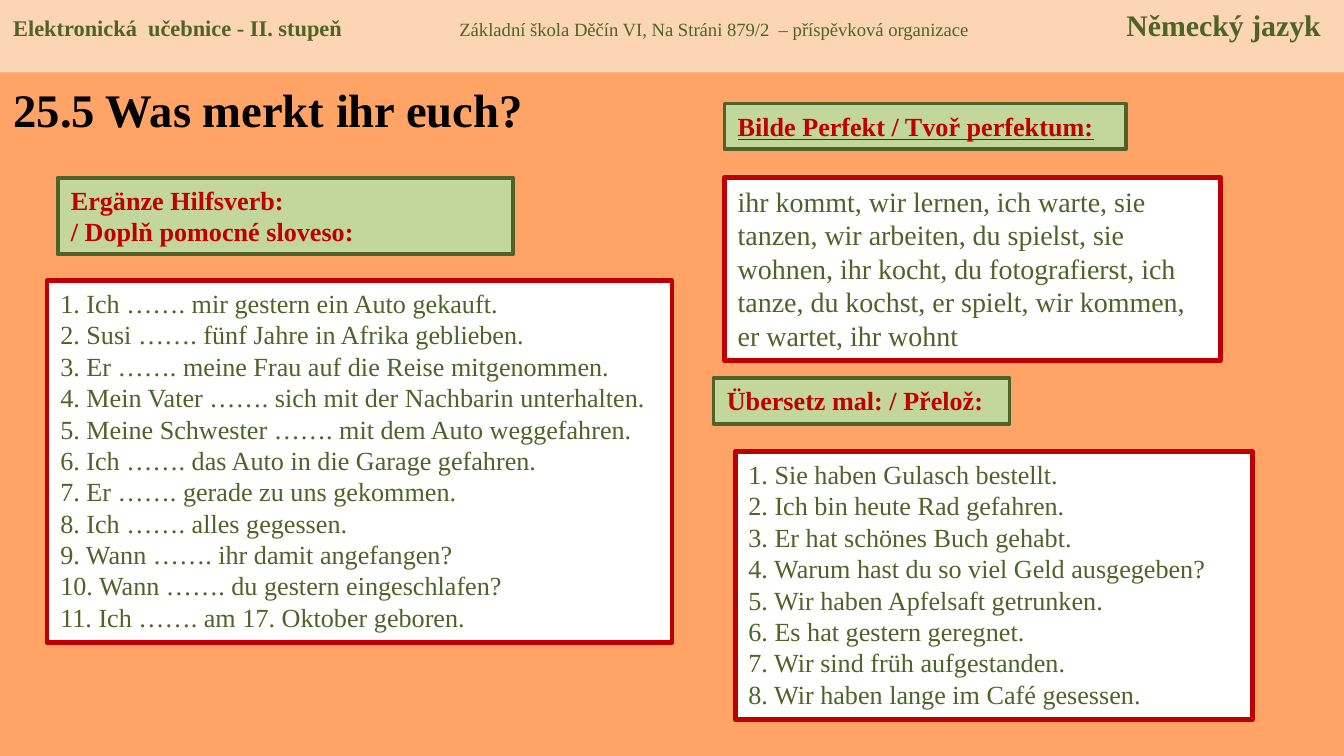
from lxml.etree import SubElement
from pptx import Presentation
from pptx.dml.color import RGBColor
from pptx.enum.shapes import MSO_SHAPE
from pptx.enum.text import MSO_ANCHOR, MSO_AUTO_SIZE, PP_ALIGN
from pptx.oxml.ns import qn
from pptx.util import Inches, Pt

COLORS = {
    "background": "FFA366",
    "band": "FCD5B5",
    "label": "C3D69B",
    "green": "4F6228",
    "red": "C00000",
    "white": "FFFFFF",
    "black": "000000",
}
FONT = "Times New Roman"
SLIDE_BOX = (0, 0, Inches(10), Inches(5.625))

HELPER_VERBS = [
    "1. Ich ……. mir gestern ein Auto gekauft.",
    "2. Susi ……. fünf Jahre in Afrika geblieben.",
    "3. Er ……. meine Frau auf die Reise mitgenommen.",
    "4. Mein Vater ……. sich mit der Nachbarin unterhalten.",
    "5. Meine Schwester ……. mit dem Auto weggefahren.",
    "6. Ich ……. das Auto in die Garage gefahren.",
    "7. Er ……. gerade zu uns gekommen.",
    "8. Ich ……. alles gegessen.",
    "9. Wann ……. ihr damit angefangen?",
    "10. Wann ……. du gestern eingeschlafen?",
    "11. Ich ……. am 17. Oktober geboren.",
]
PERFECT_FORMS = [
    "ihr kommt, wir lernen, ich warte, sie tanzen, wir arbeiten, du spielst, "
    "sie wohnen, ihr kocht, du fotografierst, ich tanze, du kochst, er spielt, "
    "wir kommen, er wartet, ihr wohnt",
]
TRANSLATIONS = [
    "1. Sie haben Gulasch bestellt.",
    "2. Ich bin heute Rad gefahren.",
    "3. Er hat schönes Buch gehabt.",
    "4. Warum hast du so viel Geld ausgegeben?",
    "5. Wir haben Apfelsaft getrunken.",
    "6. Es hat gestern geregnet.",
    "7. Wir sind früh aufgestanden.",
    "8. Wir haben lange im Café gesessen.",
]


def color(name):
    return RGBColor.from_string(COLORS[name])


def part(box, left, top, width, height):
    box_left, box_top, box_width, box_height = box
    return (
        round(box_left + box_width * left / 100),
        round(box_top + box_height * top / 100),
        round(box_width * width / 100),
        round(box_height * height / 100),
    )


def set_values(target, values):
    for name, value in values.items():
        setattr(target, name, value)


def add_text(paragraph, text, size, color_name, **values):
    run = paragraph.add_run()
    run.text = text
    set_values(run.font, {"name": FONT, "size": Pt(size), **values})
    run.font.color.rgb = color(color_name)


def add_panel(slide, box, fill, line=None, width=0):
    shape = slide.shapes.add_shape(MSO_SHAPE.RECTANGLE, *box)
    shape.shadow.inherit = False
    shape.fill.solid()
    shape.fill.fore_color.rgb = color(fill)
    if line:
        shape.line.color.rgb = color(line)
        shape.line.width = Pt(width)
    else:
        shape.line.fill.background()
    set_values(shape.text_frame, {
        "word_wrap": True,
        "vertical_anchor": MSO_ANCHOR.TOP,
        "auto_size": MSO_AUTO_SIZE.SHAPE_TO_FIT_TEXT,
    })
    shape.text_frame.paragraphs[0].alignment = PP_ALIGN.LEFT
    return shape.text_frame


def add_lines(text_frame, lines, size, color_name, **values):
    for index, line in enumerate(lines):
        paragraph = text_frame.add_paragraph() if index else text_frame.paragraphs[0]
        paragraph.alignment = PP_ALIGN.LEFT
        add_text(paragraph, line, size, color_name, **values)


def add_header(slide, box):
    paragraph = add_panel(slide, box, "band").paragraphs[0]
    tab_list = SubElement(paragraph._p.get_or_add_pPr(), qn("a:tabLst"))
    for share, alignment in ((33.2, "l"), (97.3, "r")):
        position = str(round(box[2] * share / 100))
        SubElement(tab_list, qn("a:tab"), pos=position, algn=alignment)
    add_text(paragraph, "Elektronická  učebnice - II. stupeň\t", 12, "green", bold=True)
    add_text(paragraph, "Základní škola Děčín VI, Na Stráni 879/2  – příspěvková organizace\t",
             10, "green", bold=False)
    add_text(paragraph, "Německý jazyk", 16, "green", bold=True)


def add_title(slide, box):
    title = slide.shapes.title
    set_values(title, dict(zip(("left", "top", "width", "height"), box)))
    set_values(title.text_frame, {
        "word_wrap": False,
        "vertical_anchor": MSO_ANCHOR.MIDDLE,
        "auto_size": MSO_AUTO_SIZE.SHAPE_TO_FIT_TEXT,
    })
    add_lines(title.text_frame, ["25.5 Was merkt ihr euch?"], 25, "black", bold=True)


def add_exercise(slide, box, label_share, body_share, label, body, size=14, underline=False):
    label_frame = add_panel(slide, part(box, *label_share), "label", "green", 2)
    add_lines(label_frame, label, 14, "red", bold=True, underline=underline)
    body_frame = add_panel(slide, part(box, *body_share), "white", "red", 2.5)
    add_lines(body_frame, body, size, "green")


def main():
    presentation = Presentation()
    set_values(presentation, {"slide_width": SLIDE_BOX[2], "slide_height": SLIDE_BOX[3]})
    slide = presentation.slides.add_slide(presentation.slide_layouts[5])
    slide.background.fill.solid()
    slide.background.fill.fore_color.rgb = color("background")

    add_title(slide, part(SLIDE_BOX, 0, 9.8, 40.4, 9.3))
    add_exercise(slide, part(SLIDE_BOX, 3.5, 23.5, 46.5, 61.5),
                 (1.7, 0, 72.9, 16.5), (0, 22.2, 100, 77.8),
                 ["Ergänze Hilfsverb:", "/ Doplň pomocné sloveso:"], HELPER_VERBS)
    add_exercise(slide, part(SLIDE_BOX, 53.9, 13.7, 36.9, 34),
                 (0, 0, 81, 17.8), (0, 28.8, 100, 71.2),
                 ["Bilde Perfekt / Tvoř perfektum:"], PERFECT_FORMS, size=15, underline=True)
    add_exercise(slide, part(SLIDE_BOX, 53.1, 50, 40.1, 45.2),
                 (0, 0, 54.9, 13.4), (4, 21.6, 96, 78.4),
                 ["Übersetz mal: / Přelož:"], TRANSLATIONS)
    add_header(slide, part(SLIDE_BOX, 0, 0, 100, 9.6))
    presentation.save("out.pptx")


if __name__ == "__main__":
    main()
